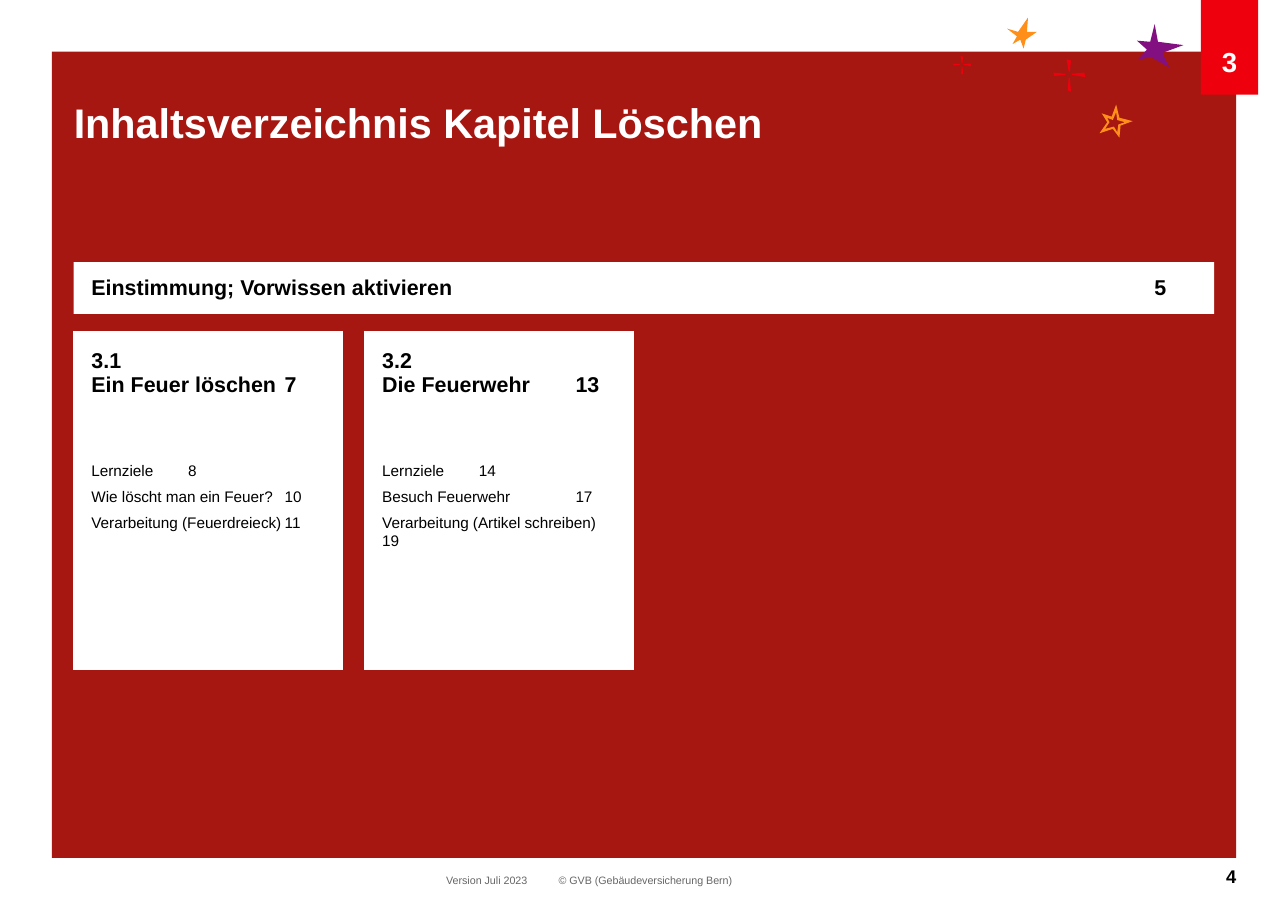
"""Build the contents slide of the chapter on extinguishing fires."""
from copy import deepcopy
from dataclasses import dataclass
from typing import Any

from lxml import etree
from pptx import Presentation
from pptx import util as u
from pptx.dml import color as c
from pptx.enum import shapes as s, text as t
from pptx.oxml import ns

WIDTH, HEIGHT = u.Inches(11.69), u.Inches(8.27)
COLORS = {"field": "A61711", "red": "EE000C", "purple": "831080", "orange": "FF8F18",
          "white": "FFFFFF", "black": "000000", "grey": "666666"}
FONT = "Arial"
TAB_STEP = u.Pt(63.15)
TAB_COUNT = 11
LEFT = 5.73
CARD_TOP, CARD_WIDTH, CARD_STEP = 36.4, 20.87, 22.58
CARD_ROWS = (13.78, 23.34)
NO_MARGINS = (0, 0, 0, 0)

Outline = list[tuple[int, int]]


@dataclass
class Area:
    """Position and size in percent of the slide."""
    left: float
    top: float
    width: float
    height: float

    def emu(self) -> tuple[int, int, int, int]:
        """Return left, top, width and height in EMU."""
        return across(self.left), down(self.top), across(self.width), down(self.height)


@dataclass
class Star:
    """Decoration around an anchor; ten outline units span the given share of the width."""
    x: float
    y: float
    size: float
    color: str
    outlines: list[Outline]


@dataclass
class Card:
    """Chapter section with its page entries."""
    heading: str
    entries: list[str]


SPARKLE = [
    [(0, -3), (-2, -14), (2, -13), (1, -3)],
    [(1, 3), (2, 15), (-1, 14), (0, 2)],
    [(3, -1), (14, -2), (15, 2), (3, 0)],
    [(-3, 0), (-13, 1), (-14, -2), (-3, -1)],
]
STARS = [
    Star(89.31, 4.59, 0.86, "purple", [
        [(0, 0), (-12, -1), (-3, 7), (-11, 16), (1, 14),
         (17, 23), (11, 10), (30, 3), (7, 0), (4, -16)]]),
    Star(82.98, 8.22, 0.86, "red", SPARKLE),
    Star(78.96, 3.99, 0.86, "orange", [
        [(-4, 7), (3, 3), (6, 11), (8, 3), (18, -4),
         (9, -4), (10, -17), (1, -4), (-9, -7), (0, 0)]]),
    Star(74.68, 7.13, 0.49, "red", SPARKLE),
    Star(86.66, 13.3, 0.86, "orange", [
        [(3, 15), (-3, 7), (-15, 11), (-8, 1), (-13, -7),
         (-4, -4), (0, -15), (3, -3), (15, 0), (4, 4)],
        [(-2, 5), (1, 10), (2, 3), (8, 1), (1, -1),
         (0, -8), (-3, -1), (-8, -3), (-6, 1), (-10, 7)]]),
]
CARDS = [
    Card("3.1\nEin Feuer löschen\t7",
         ["Lernziele\t8", "Wie löscht man ein Feuer?\t10", "Verarbeitung (Feuerdreieck)\t11"]),
    Card("3.2\nDie Feuerwehr\t13",
         ["Lernziele\t14", "Besuch Feuerwehr\t17", "Verarbeitung (Artikel schreiben)\t19"]),
]


def across(percent: float) -> int:
    """Convert a share of the slide width to EMU."""
    return round(WIDTH * percent / 100)


def down(percent: float) -> int:
    """Convert a share of the slide height to EMU."""
    return round(HEIGHT * percent / 100)


def paint(item: Any, color: str) -> None:
    """Fill a shape or a cell with one colour."""
    item.fill.solid()
    item.fill.fore_color.rgb = c.RGBColor.from_string(COLORS[color])


def inset(owner: Any, margins: tuple, anchor: Any = t.MSO_ANCHOR.TOP) -> None:
    """Set margins (left, top, right, bottom, in percent of the width) and anchor."""
    for side, margin in zip(("left", "top", "right", "bottom"), margins):
        setattr(owner, f"margin_{side}", across(margin))
    owner.vertical_anchor = anchor


def add_tabs(paragraph: Any) -> None:
    """Give a paragraph evenly spaced tab stops."""
    properties = paragraph._p.get_or_add_pPr()
    properties.set("defTabSz", str(int(TAB_STEP)))
    stops = etree.SubElement(properties, ns.qn("a:tabLst"))
    for number in range(1, TAB_COUNT + 1):
        etree.SubElement(stops, ns.qn("a:tab"), pos=str(int(TAB_STEP * number)), algn="l")


def write(frame: Any, *lines: str, size: float, color: str = "black", bold: bool = False,
          align: Any = t.PP_ALIGN.LEFT, after: float = 0) -> None:
    """Write one paragraph per line with a common format."""
    frame.word_wrap = True
    for index, line in enumerate(lines):
        paragraph = frame.add_paragraph() if index else frame.paragraphs[0]
        paragraph.text = line
        paragraph.alignment = align
        paragraph.space_after = u.Pt(after)
        if "\t" in line:
            add_tabs(paragraph)
        for run in paragraph.runs:
            run.font.name, run.font.size, run.font.bold = FONT, u.Pt(size), bold
            run.font.color.rgb = c.RGBColor.from_string(COLORS[color])
        for line_break in paragraph._p.findall(ns.qn("a:br")):
            line_break.append(deepcopy(paragraph.runs[0]._r.rPr))


def add_block(slide: Any, area: Area, color: str) -> Any:
    """Add a plain filled rectangle."""
    block = slide.shapes.add_shape(s.MSO_SHAPE.RECTANGLE, *area.emu())
    block.shadow.inherit = False
    block.line.fill.background()
    paint(block, color)
    return block


def add_label(slide: Any, area: Area, text: str, **style: Any) -> None:
    """Add a text box without margins."""
    frame = slide.shapes.add_textbox(*area.emu()).text_frame
    inset(frame, NO_MARGINS)
    write(frame, text, **style)


def add_star(slide: Any, star: Star) -> None:
    """Draw a star or sparkle as one freeform."""
    unit = across(star.size) / 10
    builder = None
    for outline in star.outlines:
        points = [(round(across(star.x) + x * unit), round(down(star.y) + y * unit))
                  for x, y in outline]
        if builder is None:
            builder = slide.shapes.build_freeform(*points[0])
        else:
            builder.move_to(*points[0])
        builder.add_line_segments(points[1:], close=True)
    shape = builder.convert_to_shape()
    shape.shadow.inherit = False
    shape.line.fill.background()
    paint(shape, star.color)


def add_card(slide: Any, index: int, card: Card) -> None:
    """Add a section table with a heading row and an entries row."""
    area = Area(LEFT + index * CARD_STEP, CARD_TOP, CARD_WIDTH, sum(CARD_ROWS))
    table = slide.shapes.add_table(2, 1, *area.emu()).table
    table.first_row = table.horz_banding = False
    for row, height in zip(table.rows, CARD_ROWS):
        row.height = down(height)
    heading, entries = table.cell(0, 0), table.cell(1, 0)
    for cell, top in ((heading, 1.37), (entries, 0.43)):
        paint(cell, "white")
        inset(cell, (1.37, top, 0.86, 0.43))
    write(heading.text_frame, card.heading, size=14, bold=True)
    write(entries.text_frame, *card.entries, size=10, after=6)


def main() -> None:
    """Build and save the slide."""
    presentation = Presentation()
    presentation.slide_width, presentation.slide_height = WIDTH, HEIGHT
    slide = presentation.slides.add_slide(presentation.slide_layouts[5])

    add_block(slide, Area(4.02, 5.68, 91.96, 88.51), "field")
    for star in STARS:
        add_star(slide, star)

    badge = add_block(slide, Area(93.24, 0, 4.45, 10.4), "red").text_frame
    inset(badge, (0, 3.42, 0, 1.28), t.MSO_ANCHOR.BOTTOM)
    write(badge, "3", size=18, color="white", bold=True, align=t.PP_ALIGN.CENTER)

    title = slide.shapes.title
    title.left, title.top, title.width, title.height = Area(LEFT, 10.64, 69.03, 7.01).emu()
    slide.shapes._spTree.append(title._element)
    inset(title.text_frame, NO_MARGINS)
    write(title.text_frame, "Inhaltsverzeichnis Kapitel Löschen", size=27, color="white", bold=True)

    bar = add_block(slide, Area(LEFT, 28.78, 88.54, 5.68), "white").text_frame
    inset(bar, (1.37, 0, 0, 0.17), t.MSO_ANCHOR.MIDDLE)
    write(bar, "Einstimmung; Vorwissen aktivieren" + "\t" * 8 + "5", size=14, bold=True)
    for index, card in enumerate(CARDS):
        add_card(slide, index, card)

    add_label(slide, Area(34.64, 95.89, 7.27, 1.57), "Version Juli 2023", size=7, color="grey")
    add_label(slide, Area(43.37, 95.89, 13.86, 1.45), "© GVB (Gebäudeversicherung Bern)",
              size=7, color="grey")
    add_label(slide, Area(89.91, 94.92, 6.07, 2.06), "4", size=12, bold=True,
              align=t.PP_ALIGN.RIGHT)
    presentation.save("out.pptx")


if __name__ == "__main__":
    main()
